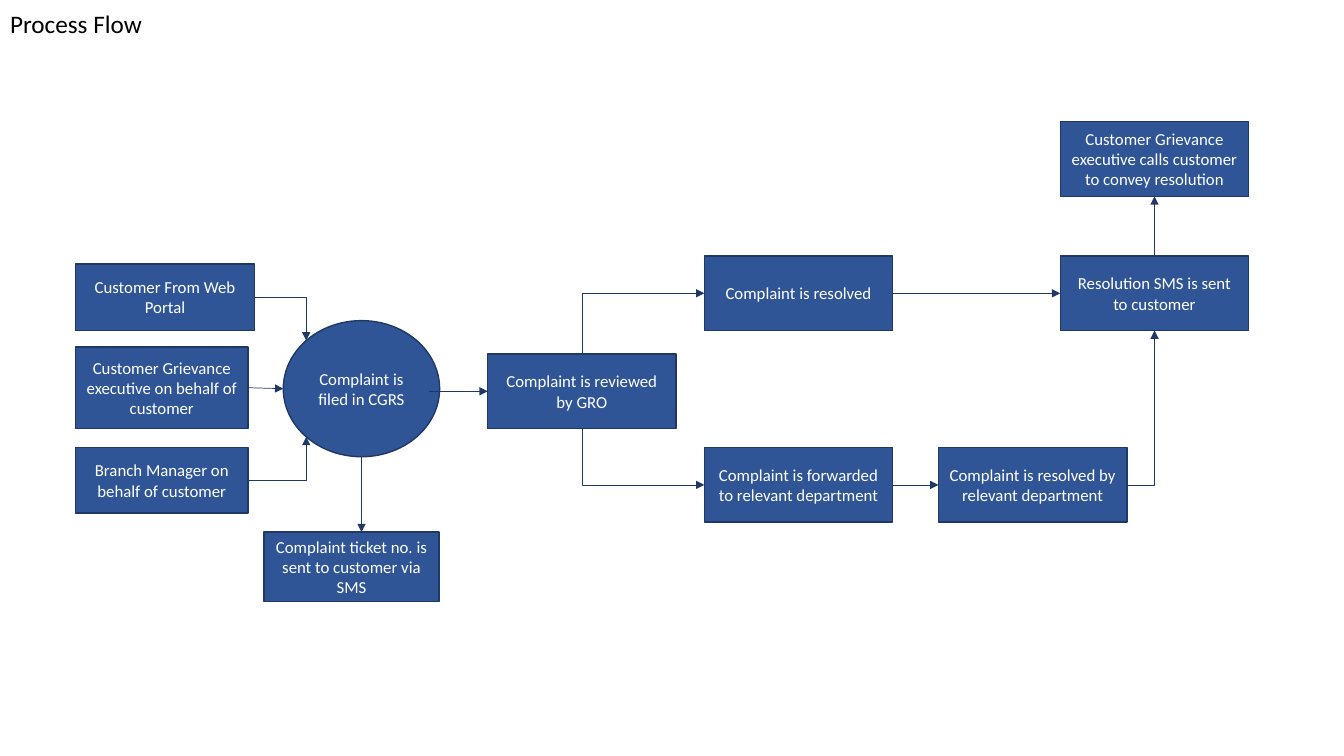
from math import sqrt

from lxml import etree
from pptx import Presentation
from pptx.dml.color import RGBColor
from pptx.enum.shapes import MSO_CONNECTOR, MSO_SHAPE
from pptx.enum.text import MSO_ANCHOR, PP_ALIGN
from pptx.oxml.ns import qn
from pptx.util import Cm, Pt

RECT, OVAL = MSO_SHAPE.RECTANGLE, MSO_SHAPE.OVAL
STRAIGHT, ELBOW = MSO_CONNECTOR.STRAIGHT, MSO_CONNECTOR.ELBOW
MIDDLE, TOP = MSO_ANCHOR.MIDDLE, MSO_ANCHOR.TOP
CENTER, LEFT = PP_ALIGN.CENTER, PP_ALIGN.LEFT

FONT = "Calibri"
COLORS = {"step": "2F5597", "outline": "203864", "step text": "FFFFFF", "title": "000000"}
RGB = {role: RGBColor.from_string(value) for role, value in COLORS.items()}

# Columns, rows and step size in centimetres
SOURCE_X, REVIEW_X, DECISION_X, DEPARTMENT_X, CLOSING_X = 1.91, 12.29, 17.75, 23.65, 26.72
RESOLVED_Y, FORWARDED_Y = 6.45, 11.28
STEP_W, STEP_H = 4.75, 1.88

# key: text, preset shape, left, top, width, height
STEPS = {
    "filed": ("Complaint is filed in CGRS", OVAL, 7.14, 8.08, 3.94, 3.43),
    "portal": ("Customer From Web Portal", RECT, SOURCE_X, 6.65, 4.5, 1.68),
    "executive": ("Customer Grievance executive on behalf of customer",
                  RECT, SOURCE_X, 8.74, 4.34, 2.06),
    "branch": ("Branch Manager on behalf of customer", RECT, SOURCE_X, FORWARDED_Y, 4.34, 1.65),
    "review": ("Complaint is reviewed by GRO", RECT, REVIEW_X, 8.92, STEP_W, STEP_H),
    "resolved": ("Complaint is resolved", RECT, DECISION_X, RESOLVED_Y, STEP_W, STEP_H),
    "forwarded": ("Complaint is forwarded to relevant department",
                  RECT, DECISION_X, FORWARDED_Y, STEP_W, STEP_H),
    "department": ("Complaint is resolved by relevant department",
                   RECT, DEPARTMENT_X, FORWARDED_Y, STEP_W, STEP_H),
    "sms": ("Resolution SMS is sent to customer", RECT, CLOSING_X, RESOLVED_Y, STEP_W, STEP_H),
    "call": ("Customer Grievance executive calls customer to convey resolution",
             RECT, CLOSING_X, 3.07, STEP_W, STEP_H),
    "ticket": ("Complaint ticket no. is sent to customer via SMS", RECT, 6.65, 13.41, 4.42, 1.75),
}

# Connection sites as fractions of the step's width and height, in site order
DIAGONAL = sqrt(0.125)
NEAR, FAR = 0.5 - DIAGONAL, 0.5 + DIAGONAL
SITES = {
    RECT: {"top": (0.5, 0), "left": (0, 0.5), "bottom": (0.5, 1), "right": (1, 0.5)},
    OVAL: {"top": (0.5, 0), "top left": (NEAR, NEAR), "left": (0, 0.5),
           "bottom left": (NEAR, FAR), "bottom": (0.5, 1)},
}

# route, start, end: a (step, site) pair is glued, a pair of numbers is a free point
FLOWS = [
    (ELBOW, ("portal", "right"), ("filed", "top left")),
    (STRAIGHT, ("executive", "right"), ("filed", "left")),
    (ELBOW, ("branch", "right"), ("filed", "bottom left")),
    (STRAIGHT, ("filed", "bottom"), (9.11, 13.41)),
    (STRAIGHT, (10.82, 9.86), ("review", "left")),
    (ELBOW, ("review", "top"), ("resolved", "left")),
    (ELBOW, ("review", "bottom"), ("forwarded", "left")),
    (STRAIGHT, ("forwarded", "right"), ("department", "left")),
    (STRAIGHT, ("resolved", "right"), ("sms", "left")),
    (ELBOW, ("department", "right"), ("sms", "bottom")),
    (STRAIGHT, ("sms", "top"), ("call", "bottom")),
]


def locate(end):
    """Return the x and y of a flow's end in centimetres."""
    if end[0] not in STEPS:
        return end
    _, preset, left, top, width, height = STEPS[end[0]]
    across, down = SITES[preset][end[1]]
    return left + across * width, top + down * height


def format_text(frame, size, color, align, anchor):
    frame.word_wrap = True
    frame.vertical_anchor = anchor
    paragraph = frame.paragraphs[0]
    paragraph.alignment = align
    font = paragraph.runs[0].font
    font.name, font.size, font.color.rgb = FONT, Pt(size), color


deck = Presentation()
deck.slide_width, deck.slide_height = Cm(33.87), Cm(19.05)
slide = deck.slides.add_slide(deck.slide_layouts[5])

title = slide.shapes.title
title.left, title.top, title.width, title.height = Cm(0), Cm(0.18), Cm(6.27), Cm(0.97)
title.text_frame.text = "Process Flow"
format_text(title.text_frame, 18, RGB["title"], LEFT, TOP)
title.text_frame.paragraphs[0].line_spacing = 0.9
title.text_frame.paragraphs[0].space_before = Pt(10)

step_shapes = {}
for key, (text, preset, *box) in STEPS.items():
    step = slide.shapes.add_shape(preset, *map(Cm, box))
    step.shadow.inherit = False
    step.fill.solid()
    step.fill.fore_color.rgb = RGB["step"]
    step.line.color.rgb = RGB["outline"]
    step.line.width = Pt(1)
    step.text_frame.text = text
    format_text(step.text_frame, 12, RGB["step text"], CENTER, MIDDLE)
    step_shapes[key] = step

for route, start, end in FLOWS:
    (x1, y1), (x2, y2) = locate(start), locate(end)
    arrow = slide.shapes.add_connector(route, Cm(x1), Cm(y1), Cm(x2), Cm(y2))
    arrow.line.color.rgb = RGB["outline"]
    arrow.line.width = Pt(0.5)
    properties = arrow.element.spPr
    etree.SubElement(properties.find(qn("a:ln")), qn("a:tailEnd"), type="triangle")
    etree.SubElement(properties, qn("a:effectLst"))

    if route == ELBOW:
        properties.find(qn("a:prstGeom")).set("prst", "bentConnector2")
        if start[1] in ("top", "bottom"):
            # A single bend leaves sideways, so turn it to leave vertically
            width, height = abs(y2 - y1), abs(x2 - x1)
            arrow.left, arrow.top = Cm((x1 + x2 - width) / 2), Cm((y1 + y2 - height) / 2)
            arrow.width, arrow.height = Cm(width), Cm(height)
            upward = y2 < y1
            frame = properties.find(qn("a:xfrm"))
            frame.set("rot", str((90 if upward else 270) * 60000))
            frame.set("flipH", "1")
            frame.set("flipV", "1" if upward else "0")

    glue = arrow.element.find(".//" + qn("p:cNvCxnSpPr"))
    for tag, (key, site) in (("a:stCxn", start), ("a:endCxn", end)):
        if key in STEPS:
            site_number = list(SITES[STEPS[key][1]]).index(site)
            etree.SubElement(glue, qn(tag), id=str(step_shapes[key].shape_id),
                             idx=str(site_number))

deck.save("out.pptx")
